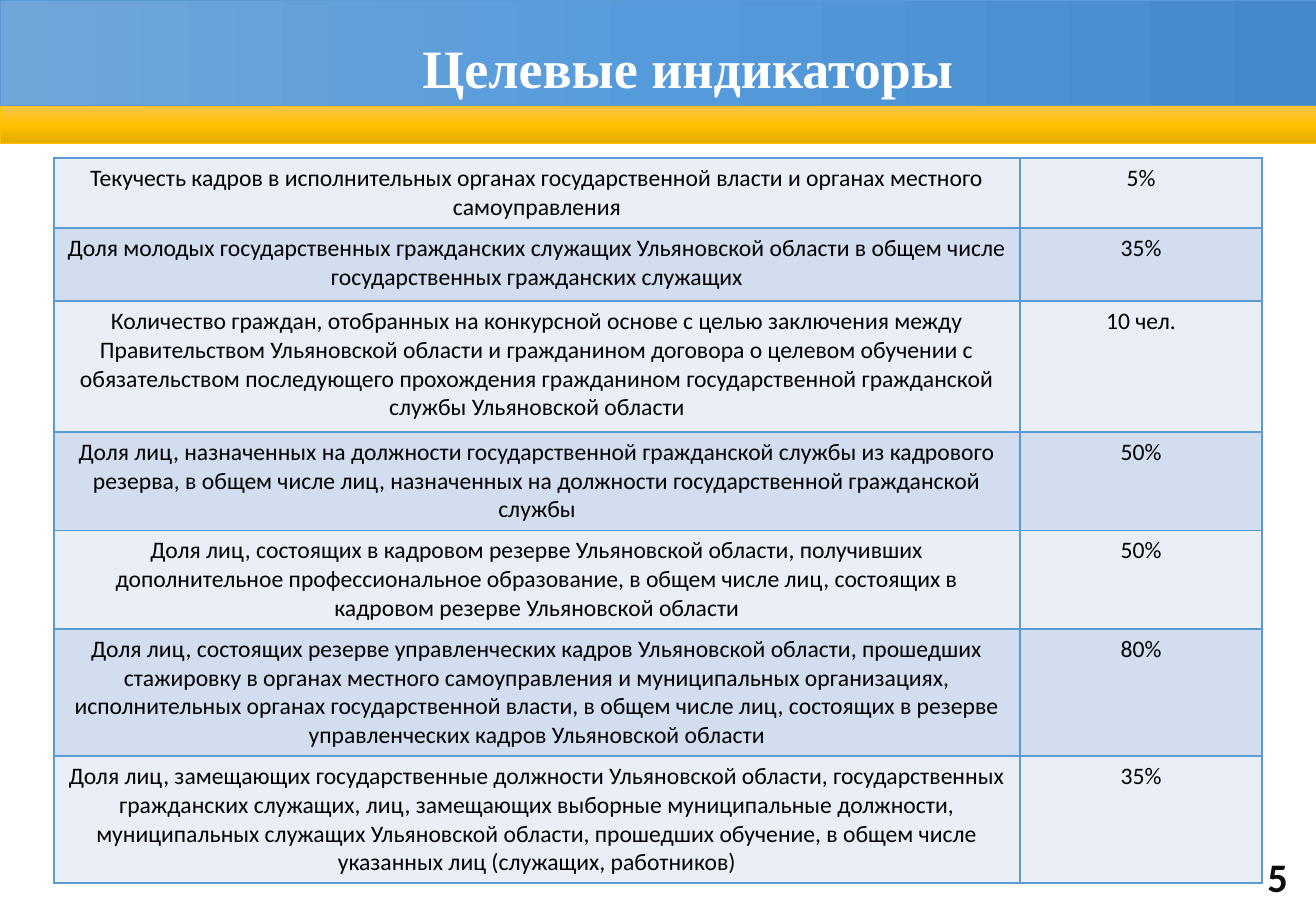
from copy import deepcopy

from lxml.etree import SubElement
from pptx import Presentation
from pptx.dml.color import RGBColor as RGB
from pptx.enum.shapes import MSO_SHAPE as Shape
from pptx.enum.text import MSO_ANCHOR as Anchor, MSO_AUTO_SIZE as Fit, PP_ALIGN as Align
from pptx.oxml.ns import qn
from pptx.util import Pt

# Content: indicator, target, row height in px
TITLE = "Целевые индикаторы"
NUMBER = "5"
ROWS = [
    ("Текучесть кадров в исполнительных органах государственной власти и органах "
     "местного самоуправления", "5%", 70),
    ("Доля молодых государственных гражданских служащих Ульяновской области в общем "
     "числе государственных гражданских служащих", "35%", 73),
    ("Количество граждан, отобранных на конкурсной основе с целью заключения между "
     "Правительством Ульяновской области и гражданином договора о целевом обучении с "
     "обязательством последующего прохождения гражданином государственной гражданской "
     "службы Ульяновской области", "10 чел.", 131),
    ("Доля лиц, назначенных на должности государственной гражданской службы из кадрового "
     "резерва, в общем числе лиц, назначенных на должности государственной гражданской "
     "службы", "50%", 98),
    ("Доля лиц, состоящих в кадровом резерве Ульяновской области, получивших "
     "дополнительное профессиональное образование, в общем числе лиц, состоящих в "
     "кадровом резерве Ульяновской области", "50%", 98),
    ("Доля лиц, состоящих резерве управленческих кадров Ульяновской области, прошедших "
     "стажировку в органах местного самоуправления и муниципальных организациях, "
     "исполнительных органах государственной власти, в общем числе лиц, состоящих в "
     "резерве управленческих кадров Ульяновской области", "80%", 127),
    ("Доля лиц, замещающих государственные должности Ульяновской области, государственных "
     "гражданских служащих, лиц, замещающих выборные муниципальные должности, "
     "муниципальных служащих Ульяновской области, прошедших обучение, в общем числе "
     "указанных лиц (служащих, работников)", "35%", 127),
]
COLS = [966, 242]

WHITE, BLACK, INK = RGB(255, 255, 255), RGB(0, 0, 0), RGB(13, 13, 13)
BLUE, GOLD = RGB(0x5B, 0x9B, 0xD5), RGB(0xFF, 0xC0, 0x00)
PALE, MID = RGB(0xEA, 0xEF, 0xF7), RGB(0xD2, 0xDE, 0xEF)
BLUES = [RGB(0x71, 0xA6, 0xDB), RGB(0x55, 0x9B, 0xDB), RGB(0x44, 0x8A, 0xCA)]
GOLDS = [RGB(0xFF, 0xC6, 0x4B), GOLD, RGB(0xE3, 0xAB, 0x00)]

# Bands: top, height, gradient, angle, line
BANDS = [(0, 106, BLUES, 0, BLUE), (106, 38, GOLDS, 270, GOLD)]
WIDE, HIGH = 1316, 911


def px(n):
    return round(n * 914400 / 121.5)


def box(*sides):
    return [px(n) for n in sides]


def write(frame, text, size, color, face="Calibri", bold=False):
    par = frame.paragraphs[0]
    par.alignment = Align.CENTER
    run = par.add_run()
    run.text = text
    font = run.font
    font.size, font.name, font.bold = Pt(size), face, bold
    font.color.rgb = color
    return par


def blend(shape, colors, angle):
    fill = shape.fill
    fill.gradient()
    fill.gradient_angle = angle
    stops = shape.element.spPr.find(".//" + qn("a:gsLst"))
    stops.insert(1, deepcopy(stops[0]))
    for i, (stop, color) in enumerate(zip(fill.gradient_stops, colors)):
        stop.position = i / 2
        stop.color.rgb = color


def frame_cell(cell):
    props = cell._tc.get_or_add_tcPr()
    for i, side in enumerate(("lnL", "lnR", "lnT", "lnB")):
        line = SubElement(props, qn("a:" + side), w=str(Pt(1)))
        solid = SubElement(line, qn("a:solidFill"))
        SubElement(solid, qn("a:srgbClr"), val=str(BLUE))
        props.insert(i, line)


def main():
    deck = Presentation()
    deck.slide_width, deck.slide_height = box(WIDE, HIGH)
    slide = deck.slides.add_slide(deck.slide_layouts[5])
    shapes = slide.shapes

    # Indicator table
    high = sum(row[2] for row in ROWS)
    table = shapes.add_table(len(ROWS), len(COLS),
                             *box(54, 158, sum(COLS), high)).table
    table.first_row = False
    for col, wide in zip(table.columns, COLS):
        col.width = px(wide)
    for r, (*texts, tall) in enumerate(ROWS):
        table.rows[r].height = px(tall)
        for c, text in enumerate(texts):
            cell = table.cell(r, c)
            cell.fill.solid()
            cell.fill.fore_color.rgb = MID if r % 2 else PALE
            frame_cell(cell)
            write(cell.text_frame, text, 14, BLACK)

    # Header bands
    for top, tall, colors, angle, edge in BANDS:
        band = shapes.add_shape(Shape.RECTANGLE, *box(0, top, WIDE, tall))
        band.shadow.inherit = False
        blend(band, colors, angle)
        band.line.color.rgb = edge
        band.line.width = Pt(0.5)

    # Title, raised above the bands
    title = shapes.title
    title.left, title.top, title.width, title.height = box(12, 24, 1304, 78)
    frame = title.text_frame
    frame.auto_size, frame.vertical_anchor = Fit.NONE, Anchor.TOP
    par = write(frame, TITLE, 32, WHITE, "Times New Roman", True)
    par.line_spacing = 1.07
    par._p.get_or_add_pPr().set("indent", str(px(48)))
    shapes._spTree.append(title.element)

    # Slide number
    number = shapes.add_textbox(*box(1255, 846, 45, 61)).text_frame
    number.word_wrap = False
    write(number, NUMBER, 24, INK, bold=True)

    deck.save("out.pptx")


if __name__ == "__main__":
    main()
